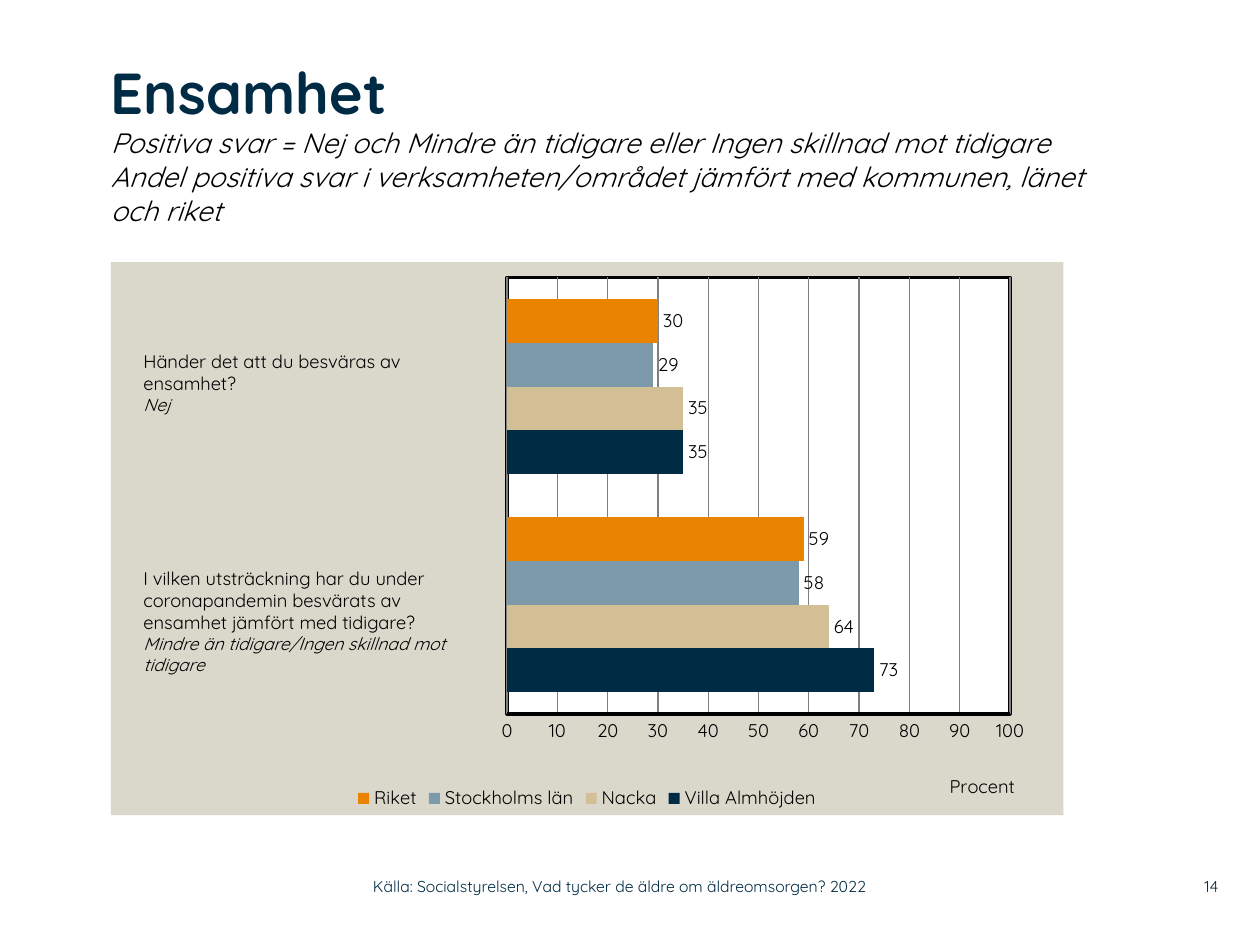
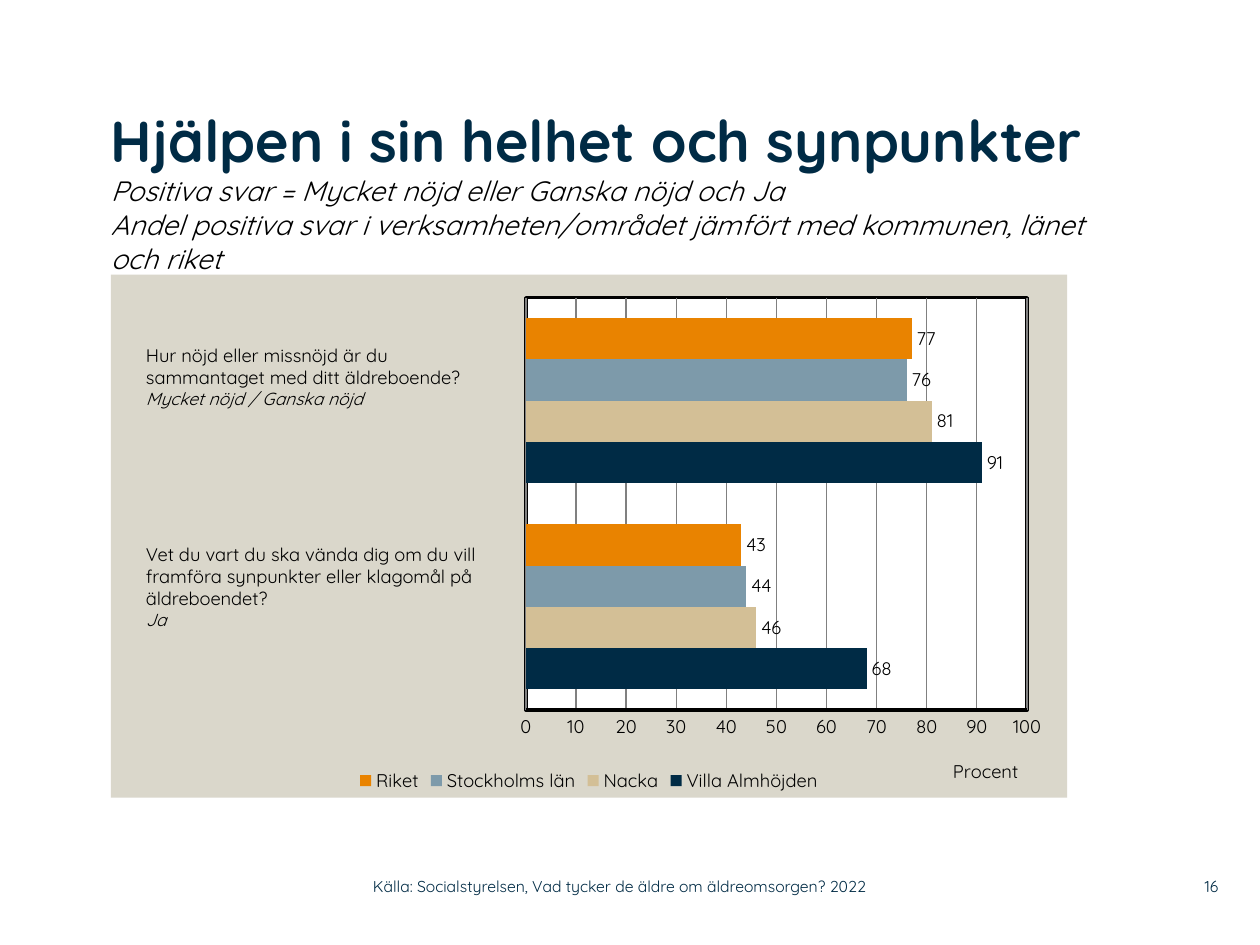
from dataclasses import dataclass

from lxml import etree
from pptx import Presentation
from pptx.chart.data import CategoryChartData
from pptx.dml.color import RGBColor
from pptx.enum.chart import (XL_CHART_TYPE, XL_LABEL_POSITION,
                             XL_LEGEND_POSITION, XL_TICK_MARK)
from pptx.enum.text import MSO_ANCHOR, MSO_AUTO_SIZE, PP_ALIGN
from pptx.oxml import parse_xml
from pptx.oxml.ns import nsdecls, qn
from pptx.util import Inches, Pt

BARS = XL_CHART_TYPE.BAR_CLUSTERED
BAR_END = XL_LABEL_POSITION.OUTSIDE_END
BOTTOM = XL_LEGEND_POSITION.BOTTOM
NO_TICK = XL_TICK_MARK.NONE
LEFT, RIGHT = PP_ALIGN.LEFT, PP_ALIGN.RIGHT
TOP, MIDDLE = MSO_ANCHOR.TOP, MSO_ANCHOR.MIDDLE
NO_FIT = MSO_AUTO_SIZE.NONE

# Shared look: a grid of 100 columns by 75 rows
WIDE, HIGH = Inches(10), Inches(7.5)
UNIT = WIDE // 100
FONT = "Quicksand"
NAVY, BLACK, WHITE, GREY, STONE = "002B45", "000000", "FFFFFF", "808080", "DAD7CB"
UNITS = {"Villa Almhöjden": NAVY, "Nacka": "D3BF96",
         "Stockholms län": "7D9AAA", "Riket": "E98300"}
SCOPE = ("Andel positiva svar i verksamheten/området jämfört med kommunen, "
         "länet och riket")
SOURCE = "Källa: Socialstyrelsen, Vad tycker de äldre om äldreomsorgen? 2022"


@dataclass
class Box:
    """Column, row, columns wide, rows high."""
    col: float
    row: float
    cols: float
    rows: float

    def emu(self) -> list[int]:
        return [int(n * UNIT) for n in (self.col, self.row, self.cols, self.rows)]


@dataclass
class Query:
    box: Box
    lines: list[str]
    answer: str


@dataclass
class Page:
    number: int
    title: str
    note: str
    head: Box
    frame: Box
    plot: tuple[float, ...]  # per cent of the chart: left, top, width, height
    values: list[tuple[int, int]]  # one pair per unit
    queries: list[Query]


PAGES = [
    Page(14, "Ensamhet",
         "Positiva svar = Nej och Mindre än tidigare eller Ingen skillnad mot tidigare",
         Box(8.8, 4.5, 78.1, 16.4), Box(8.8, 20.8, 75.6, 43.9),
         (41.6, 2.8, 52.8, 78.9),
         [(73, 35), (64, 35), (58, 29), (59, 30)],
         [Query(Box(10.4, 27.3, 29.4, 6.3),
                ["Händer det att du besväras av", "ensamhet?"], "Nej"),
          Query(Box(10.4, 44.5, 29.4, 9.7),
                ["I vilken utsträckning har du under coronapandemin besvärats av "
                 "ensamhet jämfört med tidigare?"],
                "Mindre än tidigare/Ingen skillnad mot tidigare")]),
    Page(16, "Hjälpen i sin helhet och synpunkter",
         "Positiva svar = Mycket nöjd eller Ganska nöjd och Ja",
         Box(8.8, 8.3, 77.9, 13.4), Box(8.8, 21.8, 75.9, 41.5),
         (43.4, 4.4, 52.4, 78.9),
         [(68, 91), (46, 81), (44, 76), (43, 77)],
         [Query(Box(10.6, 26.8, 31, 8.1),
                ["Hur nöjd eller missnöjd är du", "sammantaget med ditt äldreboende?"],
                "Mycket nöjd / Ganska nöjd"),
          Query(Box(10.6, 42.6, 30.5, 8.1),
                ["Vet du vart du ska vända dig om du vill framföra synpunkter "
                 "eller klagomål på äldreboendet?"], "Ja")]),
]


def rgb(code: str) -> RGBColor:
    return RGBColor.from_string(code)


def style(font, size: float, color: str = BLACK, bold: bool = False,
          slant: bool = False) -> None:
    font.name, font.size, font.bold, font.italic = FONT, Pt(size), bold, slant
    font.color.rgb = rgb(color)


def say(para, text: str, size: float, color: str = BLACK, bold: bool = False,
        slant: bool = False) -> None:
    run = para.add_run()
    run.text = text
    style(run.font, size, color, bold, slant)


def setup(frame, anchor, inset: float) -> None:
    frame.word_wrap, frame.auto_size = True, NO_FIT
    frame.vertical_anchor = anchor
    frame.margin_left = frame.margin_right = Inches(inset)
    frame.margin_top = frame.margin_bottom = Inches(inset / 2)


# Titles and text
def add_title(slide, page: Page) -> None:
    shape = slide.shapes.title
    shape.left, shape.top, shape.width, shape.height = page.head.emu()
    setup(shape.text_frame, TOP, 0)
    para = shape.text_frame.paragraphs[0]
    para.alignment = LEFT
    say(para, page.title, 33, NAVY, bold=True)
    for line in (page.note, SCOPE):
        para.add_line_break()
        say(para, line, 16, slant=True)


def add_query(slide, query: Query) -> None:
    frame = slide.shapes.add_textbox(*query.box.emu()).text_frame
    setup(frame, TOP, 0.1)
    para = frame.paragraphs[0]
    for line in query.lines:
        say(para, line, 10.5)
        para = frame.add_paragraph()
    say(para, query.answer, 10, slant=True)


def add_foot(slide, box: Box, text: str, align) -> None:
    frame = slide.shapes.add_textbox(*box.emu()).text_frame
    setup(frame, MIDDLE, 0)
    frame.paragraphs[0].alignment = align
    say(frame.paragraphs[0], text, 9, NAVY)


# Chart parts that need XML
def paint(color: str, line: str) -> etree._Element:
    return parse_xml(
        f'<c:spPr {nsdecls("c", "a")}><a:solidFill><a:srgbClr val="{color}"/>'
        f'</a:solidFill>{line}</c:spPr>')


def place(part, index: int, names: str, shares: tuple[float, ...],
          inner: bool = False) -> None:
    for old in part.findall(qn("c:layout")):
        part.remove(old)
    layout = parse_xml(f'<c:layout {nsdecls("c")}><c:manualLayout/></c:layout>')
    tags = [("layoutTarget", "inner")] if inner else []
    tags += [(f"{n}Mode", "edge") for n in names if n in "xy"]
    tags += [(n, str(round(s / 100, 3))) for n, s in zip(names, shares)]
    for tag, value in tags:
        etree.SubElement(layout[0], qn(f"c:{tag}")).set("val", value)
    part.insert(index, layout)


def add_bars(slide, page: Page) -> None:
    data = CategoryChartData()
    data.categories = ["1", "2"]
    for name, pair in zip(UNITS, page.values):
        data.add_series(name, pair)
    chart = slide.shapes.add_chart(BARS, *page.frame.emu(), data).chart
    style(chart.font, 10.5)
    chart.has_title = False
    chart.has_legend = True
    chart.legend.position = BOTTOM
    chart.legend.include_in_layout = False
    style(chart.legend.font, 10.5)

    # Bars and their values
    plot = chart.plots[0]
    plot.gap_width, plot.overlap, plot.vary_by_categories = 100, 0, False
    for series, color in zip(plot.series, UNITS.values()):
        series.format.fill.solid()
        series.format.fill.fore_color.rgb = rgb(color)
        series.invert_if_negative = False
        labels = series.data_labels
        labels.show_value, labels.position = True, BAR_END
        style(labels.font, 10.5)

    # Axes
    chart.category_axis.visible = False
    axis = chart.value_axis
    axis.minimum_scale, axis.maximum_scale, axis.major_unit = 0, 100, 10
    axis.major_tick_mark = axis.minor_tick_mark = NO_TICK
    axis.format.line.color.rgb = rgb(BLACK)
    axis.format.line.width = Pt(2)
    axis.has_major_gridlines = True
    grid = axis.major_gridlines.format.line
    grid.color.rgb, grid.width = rgb(GREY), Pt(0.75)
    style(axis.tick_labels.font, 10.5)
    say(axis.axis_title.text_frame.paragraphs[0], "Procent", 10.5)
    place(axis.axis_title._element, 1, "xy", (87.7, 91.8))

    # Fills and plot area
    space = chart._chartSpace
    space.find(qn("c:chart")).addnext(paint(STONE, "<a:ln><a:noFill/></a:ln>"))
    area = space.chart.plotArea
    place(area, 0, "xywh", page.plot, inner=True)
    area.append(paint(WHITE, f'<a:ln w="{Pt(2)}"><a:solidFill>'
                             f'<a:srgbClr val="{BLACK}"/></a:solidFill></a:ln>'))


def main() -> None:
    deck = Presentation()
    deck.slide_width, deck.slide_height = WIDE, HIGH
    for page in PAGES:
        slide = deck.slides.add_slide(deck.slide_layouts[5])
        add_title(slide, page)
        add_bars(slide, page)
        for query in page.queries:
            add_query(slide, query)
        add_foot(slide, Box(29.6, 68.9, 44.3, 2.9), SOURCE, LEFT)
        add_foot(slide, Box(92, 68.9, 4.7, 2.9), str(page.number), RIGHT)
    deck.save("out.pptx")


if __name__ == "__main__":
    main()
